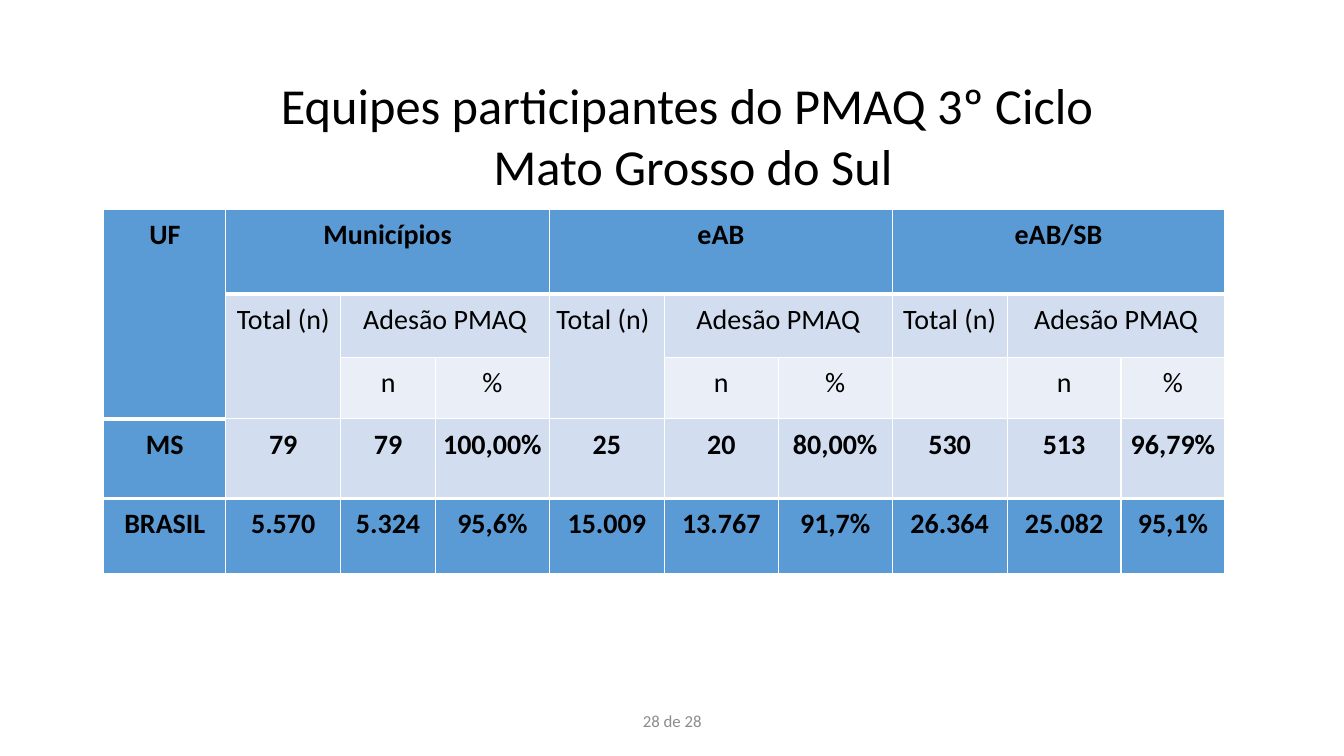
from lxml import etree
from pptx import Presentation
from pptx.dml.color import RGBColor
from pptx.enum.text import MSO_ANCHOR, PP_ALIGN
from pptx.oxml.ns import qn
from pptx.util import Pt

BLACK = RGBColor(0x00, 0x00, 0x00)
GRAY = RGBColor(0x8C, 0x8C, 0x8C)
WHITE = RGBColor(0xFF, 0xFF, 0xFF)
BLUE = RGBColor(0x5B, 0x9B, 0xD5)
PALE = RGBColor(0xD2, 0xDE, 0xEF)
PALEST = RGBColor(0xEA, 0xEF, 0xF7)
LEFT, CENTER = PP_ALIGN.LEFT, PP_ALIGN.CENTER
TOP, MIDDLE = MSO_ANCHOR.TOP, MSO_ANCHOR.MIDDLE

COLUMN_WIDTHS = [87.1, 82.1, 67.7, 81.4, 82.1, 81.4, 81.4, 82.1, 81.4, 74.2]
ROW_HEIGHTS = [60.5, 45.4, 43.9, 56.9, 54]
TOTAL, ADHESION = "Total (n)", "Adesão PMAQ"
ROWS = [
    ["UF", "Municípios", "", "", "eAB", "", "", "eAB/SB", "", ""],
    [""] + [TOTAL, ADHESION, ""] * 3,
    [""] + ["", "n", "%"] * 3,
    ["MS", "79", "79", "100,00%", "25", "20", "80,00%", "530", "513", "96,79%"],
    ["BRASIL", "5.570", "5.324", "95,6%", "15.009", "13.767", "91,7%",
     "26.364", "25.082", "95,1%"],
]
ROW_FILLS = [BLUE, PALE, PALEST, PALE, BLUE]
GROUP_COLUMNS = [1, 4, 7]
EAB_TOTAL = (1, 4)
# Merged areas: first row, first column, last row, last column
UF_SPAN = [(0, 0, 2, 0)]
GROUP_SPANS = [(0, col, 0, col + 2) for col in GROUP_COLUMNS]
ADHESION_SPANS = [(1, col + 1, 1, col + 2) for col in GROUP_COLUMNS]
TOTAL_SPANS = [(1, col, 2, col) for col in GROUP_COLUMNS[:2]]
SPANS = UF_SPAN + GROUP_SPANS + ADHESION_SPANS + TOTAL_SPANS


class SlideBuilder:
    font_name = "Calibri"

    def __init__(self, slide):
        self.slide = slide

    def style(self, paragraph, size, color, bold=False, align=CENTER):
        paragraph.alignment = align
        font = paragraph.font
        font.name, font.size, font.bold = self.font_name, Pt(size), bold
        font.color.rgb = color

    def text(self, lines, left, top, width, height, size, color, anchor=TOP):
        box = self.slide.shapes.add_textbox(Pt(left), Pt(top), Pt(width), Pt(height))
        frame = box.text_frame
        frame.word_wrap = True
        frame.vertical_anchor = anchor
        frame.text = "\n".join(lines)
        for paragraph in frame.paragraphs:
            self.style(paragraph, size, color)

    def table(self, left, top, widths, heights):
        table = self.slide.shapes.add_table(
            len(heights), len(widths), Pt(left), Pt(top),
            Pt(sum(widths)), Pt(sum(heights))).table
        for column, width in zip(table.columns, widths):
            column.width = Pt(width)
        for row, height in zip(table.rows, heights):
            row.height = Pt(height)
        return table

    def borders(self, cell, top, bottom):
        properties = cell._tc.get_or_add_tcPr()
        for edge, width in (("L", 1), ("R", 1), ("T", top), ("B", bottom)):
            line = etree.SubElement(properties, qn(f"a:ln{edge}"), w=str(Pt(width)))
            fill = etree.SubElement(line, qn("a:solidFill"))
            etree.SubElement(fill, qn("a:srgbClr"), val=str(WHITE))

    def cell(self, cell, text, fill, bold, align):
        cell.fill.solid()
        cell.fill.fore_color.rgb = fill
        if not text:
            return
        cell.margin_left = cell.margin_right = Pt(5)
        cell.margin_top = cell.margin_bottom = Pt(0)
        cell.text = text
        paragraph = cell.text_frame.paragraphs[0]
        paragraph.line_spacing = 1.25
        paragraph.space_before = paragraph.space_after = Pt(3)
        self.style(paragraph, 20, BLACK, bold, align)


def main():
    presentation = Presentation()
    presentation.slide_width, presentation.slide_height = Pt(960), Pt(540)
    slide = presentation.slides.add_slide(presentation.slide_layouts[6])
    builder = SlideBuilder(slide)

    # Title
    builder.text(["Equipes participantes do PMAQ 3º Ciclo ", "Mato Grosso do Sul"],
                 132.5, 49.7, 725, 94.3, 36, BLACK)

    # Participation table
    participation = builder.table(74.2, 149.4, COLUMN_WIDTHS, ROW_HEIGHTS)
    for first_row, first_col, last_row, last_col in SPANS:
        participation.cell(first_row, first_col).merge(
            participation.cell(last_row, last_col))
    for row, labels in enumerate(ROWS):
        for col, label in enumerate(labels):
            cell = participation.cell(row, col)
            thick_below = {0, 2, 3} if col == 0 else {0, 3}
            builder.borders(cell, 3 if row - 1 in thick_below else 1,
                            3 if row in thick_below else 1)
            builder.cell(cell, label, BLUE if col == 0 else ROW_FILLS[row],
                         row not in (1, 2),
                         LEFT if (row, col) == EAB_TOTAL else CENTER)

    # Page number
    builder.text(["28 de 28"], 318.2, 500.4, 324, 28.8, 12, GRAY, MIDDLE)

    presentation.save("out.pptx")


if __name__ == "__main__":
    main()
